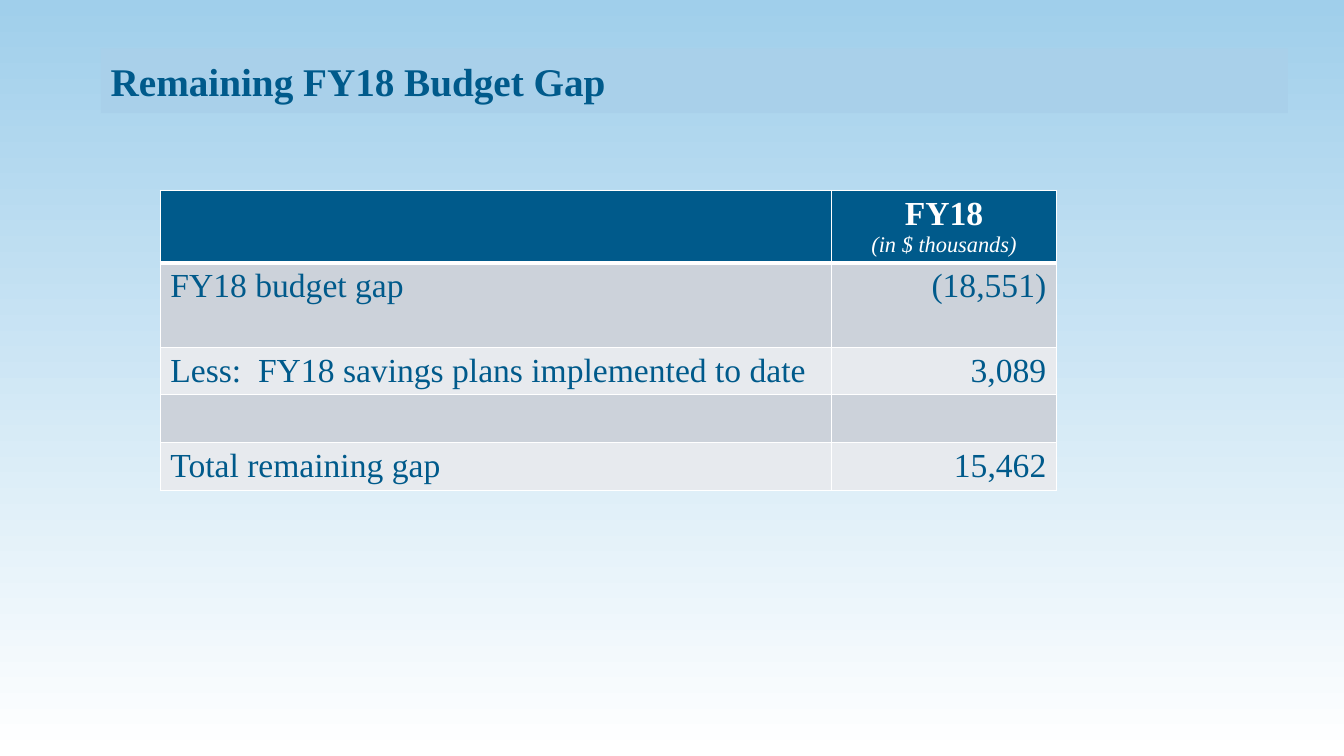
import pptx
import pptx.dml.color
import pptx.enum.shapes
import pptx.enum.text
import pptx.oxml
import pptx.oxml.ns
import pptx.util
from dataclasses import dataclass

Cm = pptx.util.Cm
ALIGN = pptx.enum.text.PP_ALIGN
MIDDLE = pptx.enum.text.MSO_ANCHOR.MIDDLE


@dataclass(frozen=True)
class Theme:
    font: str = "Times New Roman"
    navy: str = "005A8B"
    white: str = "FFFFFF"
    sky: str = "A0CFEB"
    title_band: str = "A9D0EA"
    dark_row: str = "CCD2DA"
    light_row: str = "E7EAEE"
    title_size: int = 28
    table_size: int = 24
    unit_size: int = 16


theme = Theme()
rgb = pptx.dml.color.RGBColor.from_string


def write(para, text, size=theme.table_size, color=theme.navy,
          bold=False, italic=False, align=ALIGN.LEFT):
    para.alignment = align
    span = para.add_run()
    span.text = text
    span.font.name = theme.font
    span.font.size = pptx.util.Pt(size)
    span.font.color.rgb = rgb(color)
    span.font.bold = bold
    span.font.italic = italic


def style_cell(cell, fill, top=1, bottom=1):
    """Give a cell its white borders, widths in points, and its fill."""
    properties = cell._tc.get_or_add_tcPr()
    for side, width in (("L", 1), ("R", 1), ("T", top), ("B", bottom)):
        properties.append(pptx.oxml.parse_xml(
            f'<a:ln{side} {pptx.oxml.ns.nsdecls("a")} w="{pptx.util.Pt(width)}">'
            f'<a:solidFill><a:srgbClr val="{theme.white}"/></a:solidFill>'
            f'</a:ln{side}>'))
    cell.fill.solid()
    cell.fill.fore_color.rgb = rgb(fill)


deck = pptx.Presentation()
deck.slide_width, deck.slide_height = Cm(33.87), Cm(19.05)
page = deck.slides.add_slide(deck.slide_layouts[6])

# Background
backdrop = page.background.fill
backdrop.gradient()
backdrop.gradient_angle = 270
for stop, position, color in zip(backdrop.gradient_stops, (0, 1), (theme.sky, theme.white)):
    stop.position = position
    stop.color.rgb = rgb(color)

# Title
title = page.shapes.add_shape(pptx.enum.shapes.MSO_SHAPE.RECTANGLE,
                              Cm(2.54), Cm(1.22), Cm(29.92), Cm(1.63))
title.shadow.inherit = False
title.fill.solid()
title.fill.fore_color.rgb = rgb(theme.title_band)
title.line.fill.background()
title.text_frame.word_wrap = True
title.text_frame.vertical_anchor = MIDDLE
write(title.text_frame.paragraphs[0], "Remaining FY18 Budget Gap",
      size=theme.title_size, bold=True)

# Budget table
budget_lines = [
    ("FY18 budget gap", "(18,551)"),
    ("Less:  FY18 savings plans implemented to date", "3,089"),
    ("", ""),
    ("Total remaining gap", "15,462"),
]
column_widths = (16.92, 5.66)
row_heights = (1.82, 2.13, 1.2, 1.2, 1.2)
table = page.shapes.add_table(len(row_heights), len(column_widths), Cm(4.04), Cm(4.8),
                              Cm(sum(column_widths)), Cm(sum(row_heights))).table
for column, width in zip(table.columns, column_widths):
    column.width = Cm(width)
for row, height in zip(table.rows, row_heights):
    row.height = Cm(height)

for column in range(len(column_widths)):
    style_cell(table.cell(0, column), theme.navy, bottom=3)
heading = table.cell(0, 1).text_frame
write(heading.paragraphs[0], "FY18", color=theme.white, bold=True, align=ALIGN.CENTER)
write(heading.add_paragraph(), "(in $ thousands)", size=theme.unit_size,
      color=theme.white, italic=True, align=ALIGN.CENTER)

for number, budget_line in enumerate(budget_lines, start=1):
    fill = theme.dark_row if number % 2 else theme.light_row
    for column, (text, align) in enumerate(zip(budget_line, (ALIGN.LEFT, ALIGN.RIGHT))):
        cell = table.cell(number, column)
        style_cell(cell, fill, top=3 if number == 1 else 1)
        if text:
            write(cell.text_frame.paragraphs[0], text, align=align)

deck.save("out.pptx")
